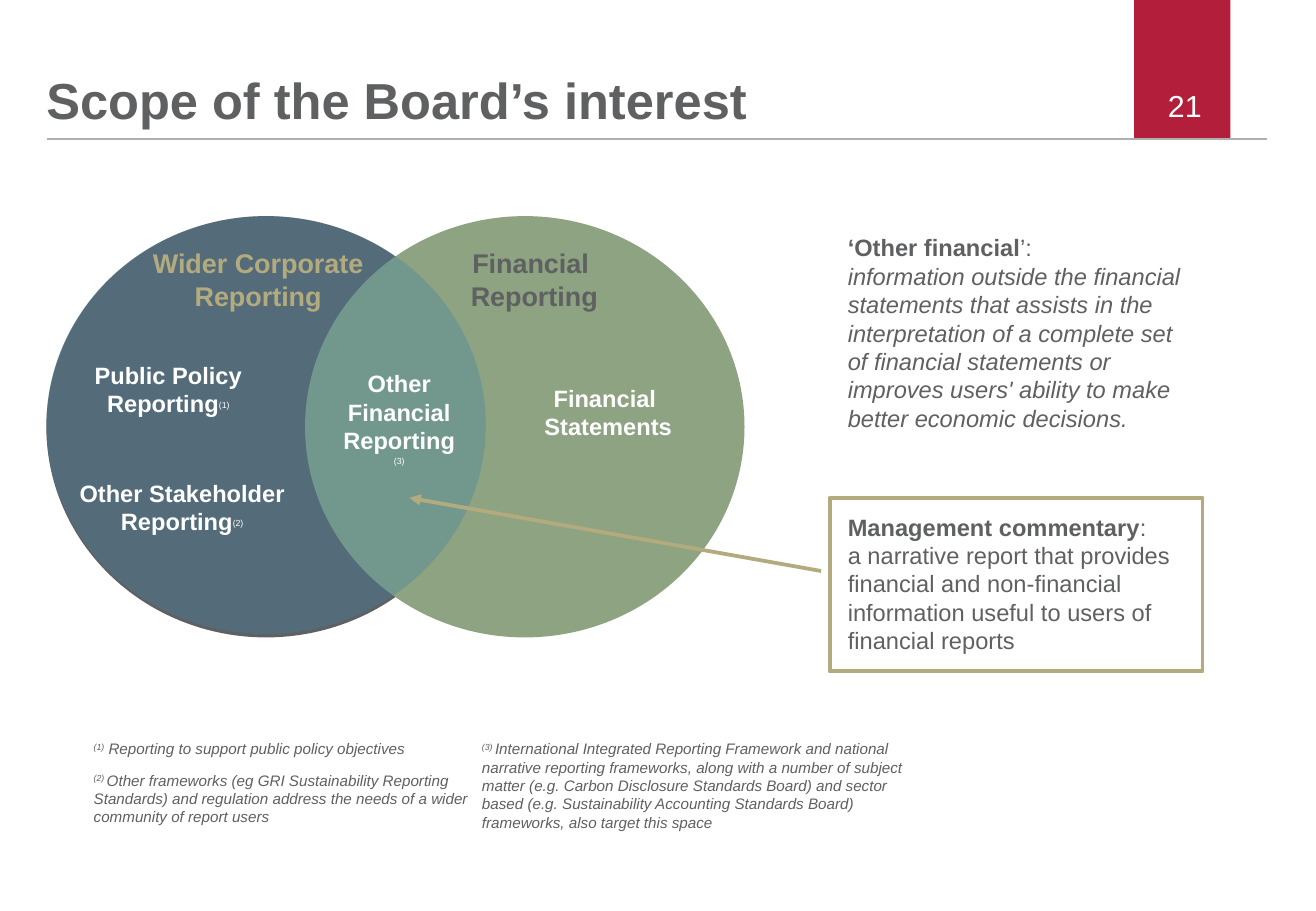
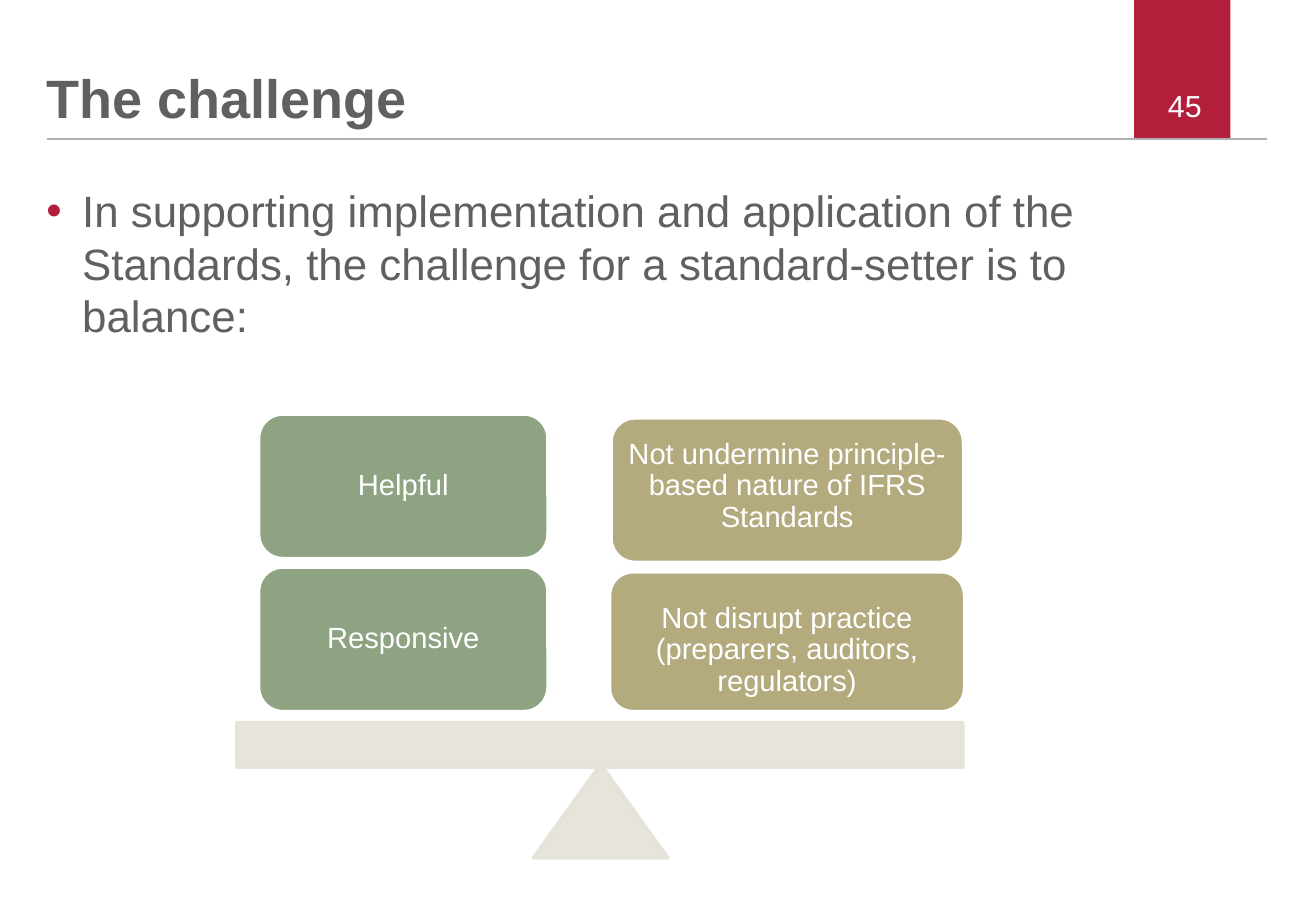
from lxml import etree
from pptx import Presentation
from pptx import util as u
from pptx.dml.color import RGBColor
from pptx.enum import shapes, text
from pptx.oxml import ns

Cm, Pt = u.Cm, u.Pt
ALIGN, ANCHOR = text.PP_ALIGN, text.MSO_ANCHOR
SHAPE = shapes.MSO_SHAPE

GREY = RGBColor(0x5F, 0x60, 0x62)
RULE = RGBColor(0xAF, 0xAF, 0xB0)
RED = RGBColor(0xB3, 0x1E, 0x3B)
GREEN = RGBColor(0x8D, 0xA3, 0x81)
BLUE = RGBColor(0x41, 0x84, 0xA9)
SAND = RGBColor(0xB3, 0xAA, 0x7E)
STONE = RGBColor(0xE5, 0xE2, 0xD8)
WHITE = RGBColor(0xFF, 0xFF, 0xFF)

NOTE_INSETS = (0.99, 0.1, 0.23, 0.1)
PLAIN_INSETS = (0.25, 0.13, 0.25, 0.13)


def add_child(parent, tag, **attributes):
    child = etree.SubElement(parent, ns.qn(tag))
    for name, value in attributes.items():
        child.set(name, value)
    return child


class Deck:
    """Holds the presentation, its style and the current slide."""

    font = "Arial"

    def __init__(self):
        self.presentation = Presentation()
        self.presentation.slide_width = Cm(27.52)
        self.presentation.slide_height = Cm(19.05)
        self.slide = None

    def start_slide(self, title, number, size, width):
        layout = self.presentation.slide_layouts[5]
        self.slide = self.presentation.slides.add_slide(layout)
        # Band, rule and page number
        self.shape(SHAPE.RECTANGLE, (23.72, 0, 2.01, 2.9), RED)
        self.line((0.99, 2.9), (26.49, 2.9), RULE, 1.2)
        self.textbox((18.95, 1.7, 6.43, 1.02), [[str(number)]], 18, WHITE,
                     align=ALIGN.RIGHT, anchor=ANCHOR.MIDDLE)
        # Title
        heading = self.slide.shapes.title
        heading.left, heading.top, heading.width, heading.height = map(
            Cm, (0.97, 0, width, 2.72))
        self.set_text(heading, [[title]], size, GREY, bold=True, spacing=0.9,
                      anchor=ANCHOR.BOTTOM, insets=(0, 0, 0, 0))

    def set_text(self, shape, paragraphs, size, color, bold=False, italic=False,
                 align=ALIGN.LEFT, anchor=ANCHOR.TOP, insets=PLAIN_INSETS,
                 spacing=None, before=0, bullet=None):
        """Each paragraph is a list of strings or (string, style) pairs."""
        frame = shape.text_frame
        frame.word_wrap = True
        frame.auto_size = text.MSO_AUTO_SIZE.NONE
        frame.vertical_anchor = anchor
        (frame.margin_left, frame.margin_top,
         frame.margin_right, frame.margin_bottom) = map(Cm, insets)
        for index, parts in enumerate(paragraphs):
            paragraph = frame.add_paragraph() if index else frame.paragraphs[0]
            paragraph.alignment = align
            paragraph.space_before = Pt(before if index else 0)
            if spacing:
                paragraph.line_spacing = spacing
            if bullet:
                self.add_bullet(paragraph, bullet)
            font = paragraph.font
            font.name, font.size = self.font, Pt(size)
            font.bold, font.italic = bold, italic
            font.color.rgb = color
            for part in parts:
                self.add_run(paragraph, *((part,) if isinstance(part, str) else part))

    def add_run(self, paragraph, words, style=""):
        for index, line in enumerate(words.split("\n")):
            if index:
                paragraph.add_line_break()
            if not line:
                continue
            run = paragraph.add_run()
            run.text = line
            if style == "bold":
                run.font.bold = True
            elif style == "italic":
                run.font.italic = True
            elif style == "super":
                run.font.size, run.font.bold = Pt(9), False
                run.font._element.set("baseline", "30000")

    def add_bullet(self, paragraph, color):
        properties = paragraph._p.get_or_add_pPr()
        properties.set("marL", str(Cm(0.75)))
        properties.set("indent", str(-Cm(0.75)))
        bullet_color = add_child(properties, "a:buClr")
        add_child(bullet_color, "a:srgbClr", val=str(color))
        add_child(properties, "a:buFont", typeface=self.font)
        add_child(properties, "a:buChar", char="•")

    def textbox(self, box, paragraphs, size, color, **style):
        shape = self.slide.shapes.add_textbox(*map(Cm, box))
        self.set_text(shape, paragraphs, size, color, **style)

    def label(self, box, parts, size=14, color=WHITE):
        self.textbox(box, [parts], size, color, bold=True, align=ALIGN.CENTER)

    def shape(self, kind, box, fill=None, line=None, width=2, opacity=100):
        shape = self.slide.shapes.add_shape(kind, *map(Cm, box))
        shape.shadow.inherit = False
        if fill is None:
            shape.fill.background()
        else:
            shape.fill.solid()
            shape.fill.fore_color.rgb = fill
        if line is None:
            shape.line.fill.background()
        else:
            shape.line.color.rgb = line
            shape.line.width = Pt(width)
        if opacity < 100:
            for color in shape._element.spPr.iter(ns.qn("a:srgbClr")):
                add_child(color, "a:alpha", val=str(opacity * 1000))
        return shape

    def line(self, start, end, color, width, arrow=False):
        connector = self.slide.shapes.add_connector(
            shapes.MSO_CONNECTOR.STRAIGHT, *map(Cm, start + end))
        connector.line.color.rgb = color
        connector.line.width = Pt(width)
        if arrow:
            add_child(connector.line._get_or_add_ln(), "a:tailEnd", type="triangle")
        add_child(connector._element.spPr, "a:effectLst")

    def block(self, box, words, fill, shift=0):
        """Rounded block; shift moves its text down by that many cm."""
        shape = self.shape(SHAPE.ROUNDED_RECTANGLE, box, fill, WHITE)
        insets = (0.2, max(2 * shift, 0), 0.2, max(-2 * shift, 0))
        self.set_text(shape, [[words]], 17.3, WHITE, align=ALIGN.CENTER,
                      anchor=ANCHOR.MIDDLE, insets=insets, spacing=0.9)


def build_scope(deck):
    deck.start_slide("Scope of the Board’s interest", 21, 30, 21.51)

    # Definition
    deck.textbox((16.74, 4.78, 8.41, 4.55), [[
        ("‘Other financial", "bold"), "’:\n",
        ("information outside the financial statements that assists in the "
         "interpretation of a complete set of financial statements or improves "
         "users' ability to make better economic decisions.", "italic")]],
        14, GREY, insets=NOTE_INSETS)

    # Overlapping circles
    deck.shape(SHAPE.OVAL, (0.97, 4.52, 9.19, 8.81), GREY)
    deck.shape(SHAPE.OVAL, (6.38, 4.52, 9.19, 8.81), GREEN)
    deck.shape(SHAPE.OVAL, (0.97, 4.52, 9.19, 8.74), BLUE, opacity=35)

    # Circle labels
    deck.label((9.04, 5.03, 4.27, 1.63), ["Financial \nReporting"], 16, GREY)
    deck.label((2.57, 5.03, 5.66, 1.63), ["Wider Corporate Reporting"], 16, SAND)
    deck.label((11.02, 7.9, 3.4, 1.45), ["Financial \nStatements"])
    deck.label((6.38, 7.59, 3.94, 2.31),
               ["Other Financial Reporting\n", ("(3)", "super")])
    deck.label((1.55, 7.42, 3.94, 1.45),
               ["Public Policy Reporting", ("(1)", "super")])
    deck.label((1.32, 9.88, 4.98, 1.45),
               ["Other Stakeholder Reporting", ("(2)", "super")])

    # Management commentary
    deck.line((17.17, 11.94), (8.56, 10.41), SAND, 2.25, arrow=True)
    commentary = deck.shape(SHAPE.RECTANGLE, (17.35, 10.41, 7.8, 3.63),
                            line=SAND, width=2.25)
    deck.set_text(commentary, [
        [("Management commentary", "bold"), ":"],
        ["a narrative report that provides financial and non-financial "
         "information useful to users of financial reports"]],
        14, GREY, insets=(0.38, 0.31, 0.23, 0.1))

    # Footnotes
    footnotes = [
        ((0.97, 15.37, 10.01, 2.74), [
            [("(1)", "super"), " Reporting to support public policy objectives"],
            [("(2) ", "super"),
             "Other frameworks (eg GRI Sustainability Reporting Standards) and "
             "regulation address the needs of a wider community of report users"]]),
        ((9.09, 15.37, 10.01, 1.42), [
            [("(3) ", "super"),
             "International Integrated Reporting Framework and national narrative "
             "reporting frameworks, along with a number of subject matter (e.g. "
             "Carbon Disclosure Standards Board) and sector based (e.g. "
             "Sustainability Accounting Standards Board) frameworks, also target "
             "this space"]]),
    ]
    for box, paragraphs in footnotes:
        deck.textbox(box, paragraphs, 9, GREY, italic=True, before=7.7,
                     insets=NOTE_INSETS)


def build_challenge(deck):
    deck.start_slide("The challenge", 45, 32, 20.37)
    deck.textbox((0.97, 3.84, 23.6, 2.34), [[
        "In supporting implementation and application of the Standards, the "
        "challenge for a standard-setter is to balance:"]],
        26, GREY, insets=(0, 0, 0, 0), bullet=RED)

    # Seesaw
    for kind, box in ((SHAPE.ISOSCELES_TRIANGLE, (11.15, 15.98, 2.82, 1.96)),
                      (SHAPE.RECTANGLE, (4.95, 15.11, 15.19, 0.94))):
        deck.shape(kind, box, STONE, STONE, opacity=90)

    # Weights on each side
    deck.block((12.75, 11.96, 7.42, 2.92),
               "Not disrupt practice (preparers, auditors, regulators)", SAND, 0.18)
    deck.block((12.78, 8.74, 7.37, 3.02),
               "Not undermine principle-based nature of IFRS Standards", SAND, -0.08)
    for top, words in ((11.86, "Responsive"), (8.66, "Helpful")):
        deck.block((5.41, top, 6.05, 3.02), words, GREEN)


def main():
    deck = Deck()
    build_scope(deck)
    build_challenge(deck)
    deck.presentation.save("out.pptx")


if __name__ == "__main__":
    main()
